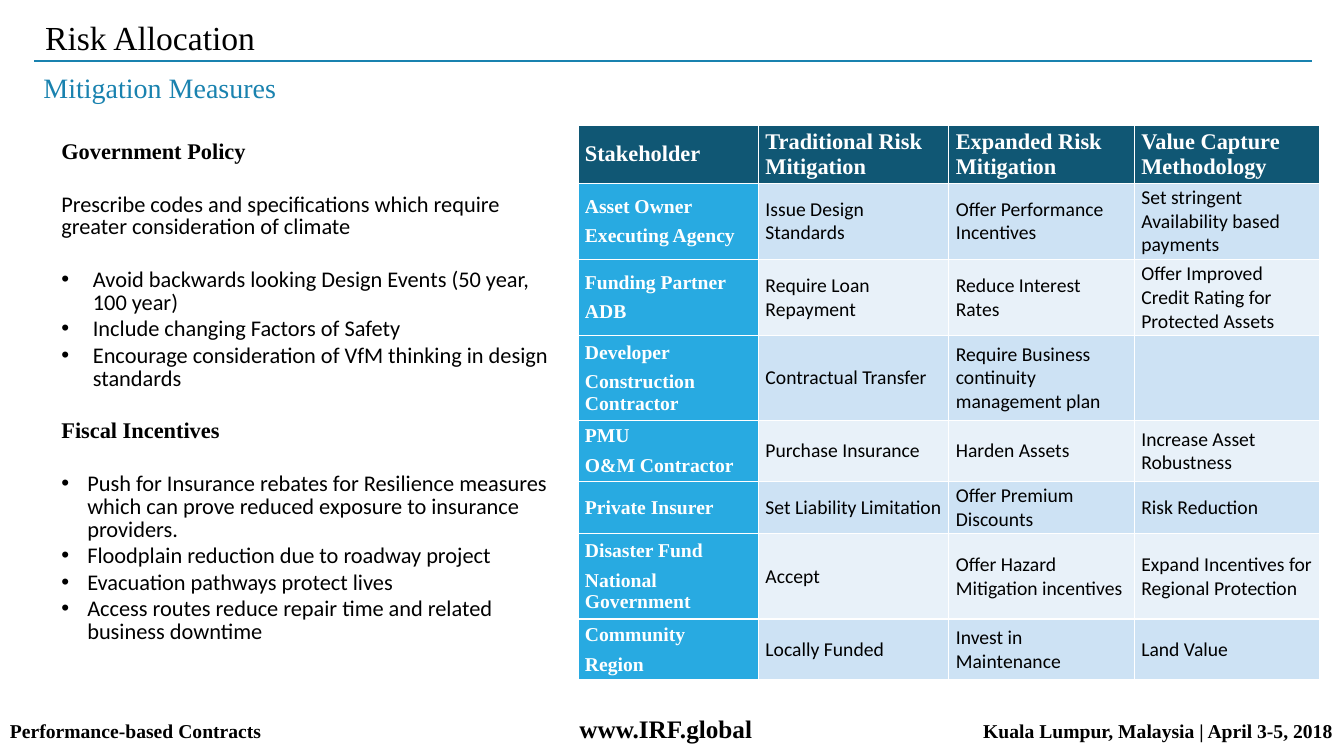
from lxml.etree import SubElement
from pptx import Presentation
from pptx.dml.color import RGBColor
from pptx.enum.shapes import MSO_CONNECTOR
from pptx.enum.text import MSO_ANCHOR
from pptx.oxml.ns import qn
from pptx.util import Pt

SERIF, SANS = "Times New Roman", "Calibri"


def set_font(para, name, size, color, bold=False):
    para.font.name = name
    para.font.size = Pt(size)
    para.font.bold = bold
    para.font.color.rgb = RGBColor.from_string(color)


def add_text_box(left, top, width, height):
    box = page.shapes.add_textbox(Pt(left), Pt(top), Pt(width), Pt(height))
    box.text_frame.word_wrap = True
    return box.text_frame


deck = Presentation()
deck.slide_width, deck.slide_height = Pt(960), Pt(540)
page = deck.slides.add_slide(deck.slide_layouts[6])

rule = page.shapes.add_connector(MSO_CONNECTOR.STRAIGHT, Pt(24.5), Pt(43.5), Pt(937.5), Pt(43.5))
rule.line.color.rgb = RGBColor.from_string("1982AF")
rule.line.width = Pt(1.5)
SubElement(rule._element.spPr, qn("a:effectLst"))

headings = [
    ("Risk Allocation", 13, 629, 24, "000000", 7.2),
    ("Mitigation Measures", 50.4, 911, 20, "1982AF", 5.8),
]
for text, top, width, size, color, inset in headings:
    frame = add_text_box(25.2, top, width, 38)
    frame.margin_left = Pt(inset)
    para = frame.paragraphs[0]
    para.text = text
    para.line_spacing = 0.85
    set_font(para, SERIF, size, color)

SECTION_GAP, LINE_GAP = 21.4, 2.6
measures = [
    ("Government Policy", SERIF, 0, 0),
    ("Prescribe codes and specifications which require greater consideration of climate", SANS, 0, SECTION_GAP),
    ("Avoid backwards looking Design Events (50 year, 100 year)", SANS, 22.5, SECTION_GAP),
    ("Include changing Factors of Safety", SANS, 22.5, LINE_GAP),
    ("Encourage consideration of VfM thinking in design standards", SANS, 22.5, LINE_GAP),
    ("Fiscal Incentives", SERIF, 0, SECTION_GAP),
    ("Push for Insurance rebates for Resilience measures which can prove reduced exposure "
     "to insurance providers.", SANS, 18.5, SECTION_GAP),
    ("Floodplain reduction due to roadway project", SANS, 18.5, LINE_GAP),
    ("Evacuation pathways protect lives", SANS, 18.5, LINE_GAP),
    ("Access routes reduce repair time and related business downtime", SANS, 18.5, LINE_GAP),
]
frame = add_text_box(36.8, 97.2, 376, 368)
for index, (text, font, indent, gap) in enumerate(measures):
    para = frame.add_paragraph() if index else frame.paragraphs[0]
    para.text = text
    para.line_spacing = 0.85
    para.space_before = Pt(gap)
    if indent:
        properties = para._p.get_or_add_pPr()
        properties.set("marL", str(Pt(indent)))
        properties.set("indent", str(-Pt(indent)))
        SubElement(properties, qn("a:buFont"), typeface="Arial")
        SubElement(properties, qn("a:buChar"), char="•")
    set_font(para, font, 16, "000000", font == SERIF)

columns = [129, 136, 132.5, 132.5]
heights = [41.6, 54.4, 54.4, 60.9, 43.5, 37.3, 60.9, 43.5]
rows = [
    ["Stakeholder", "Traditional Risk Mitigation", "Expanded Risk Mitigation", "Value Capture Methodology"],
    ["Asset Owner\nExecuting Agency", "Issue Design Standards", "Offer Performance Incentives",
     "Set stringent Availability based payments"],
    ["Funding Partner\nADB", "Require Loan Repayment", "Reduce Interest Rates",
     "Offer Improved Credit Rating for Protected Assets"],
    ["Developer\nConstruction Contractor", "Contractual Transfer",
     "Require Business continuity management plan", ""],
    ["PMU\nO&M Contractor", "Purchase Insurance", "Harden Assets", "Increase Asset Robustness"],
    ["Private Insurer", "Set Liability Limitation", "Offer Premium Discounts", "Risk Reduction"],
    ["Disaster Fund\nNational Government", "Accept", "Offer Hazard Mitigation incentives",
     "Expand Incentives for Regional Protection"],
    ["Community\nRegion", "Locally Funded", "Invest in Maintenance", "Land Value"],
]
table = page.shapes.add_table(
    len(rows), len(columns), Pt(412.8), Pt(89.3), Pt(sum(columns)), Pt(sum(heights))).table
for column, width in zip(table.columns, columns):
    column.width = Pt(width)
for row_index, row in enumerate(rows):
    table.rows[row_index].height = Pt(heights[row_index])
    for column_index, text in enumerate(row):
        cell = table.cell(row_index, column_index)
        cell.text = text
        cell.vertical_anchor = MSO_ANCHOR.MIDDLE
        cell.margin_left = cell.margin_right = Pt(5)
        cell.margin_top = cell.margin_bottom = Pt(0)
        if row_index == 0:
            fill, style = "105774", (SERIF, 16, "FFFFFF", True)
        elif column_index == 0:
            fill, style = "28AAE1", (SERIF, 14, "FFFFFF", True)
        else:
            fill, style = ("CDE2F4" if row_index % 2 else "E8F1F9"), (SANS, 14, "000000")
        cell.fill.solid()
        cell.fill.fore_color.rgb = RGBColor.from_string(fill)
        for index, para in enumerate(cell.text_frame.paragraphs):
            para.space_before = Pt(5.8 if index else 0)
            set_font(para, *style)

footer = add_text_box(0, 504, 960, 31.7)
footer.margin_top = Pt(5.4)
para = footer.paragraphs[0]
tabs = SubElement(para._p.get_or_add_pPr(), qn("a:tabLst"))
for position, alignment in [(468.5, "ctr"), (945, "r")]:
    SubElement(tabs, qn("a:tab"), pos=str(Pt(position)), algn=alignment)
set_font(para, SERIF, 14, "000000", True)
for text, size in [("Performance-based Contracts\t", 14), ("www.IRF.global", 18),
                   ("\tKuala Lumpur, Malaysia | April 3-5, 2018", 14)]:
    span = para.add_run()
    span.text = text
    span.font.size = Pt(size)

deck.save("out.pptx")
